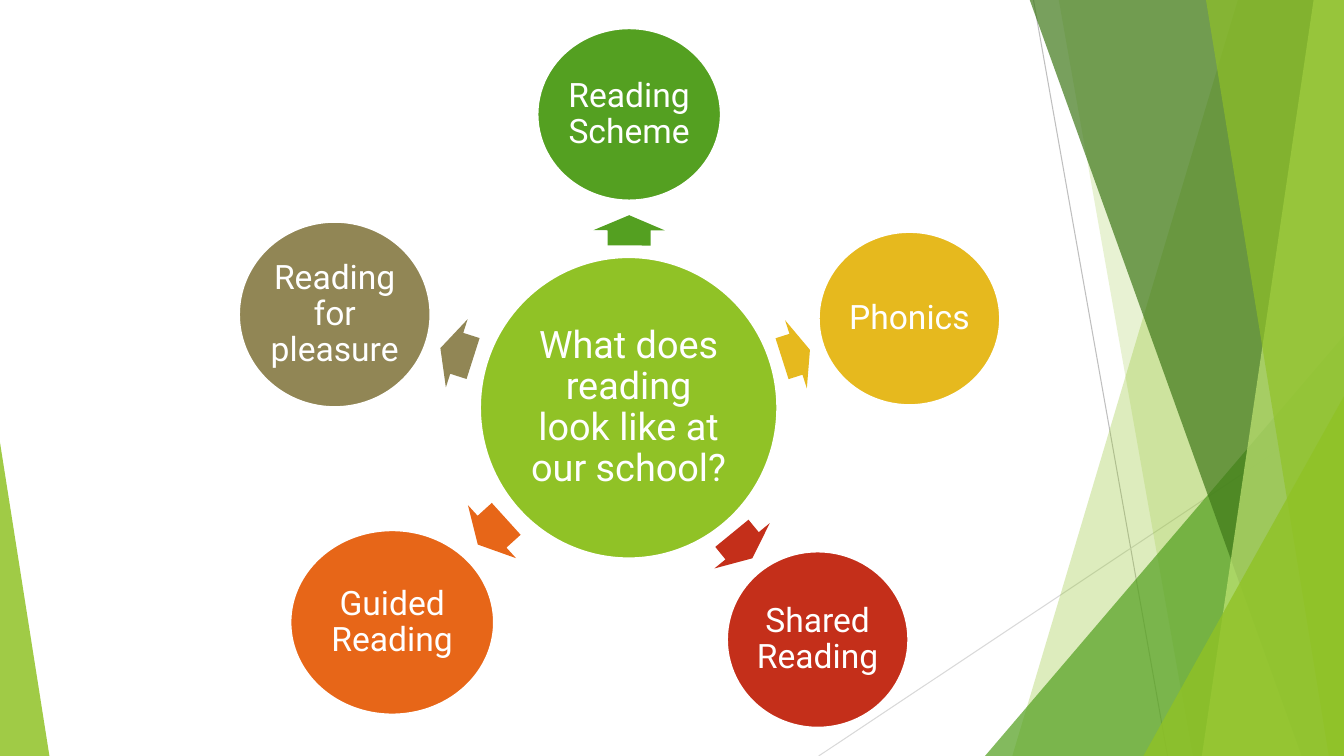
from lxml import etree
from pptx import Presentation
from pptx.dml.color import RGBColor
from pptx.enum.shapes import MSO_CONNECTOR, MSO_SHAPE
from pptx.enum.text import MSO_ANCHOR, PP_ALIGN
from pptx.oxml.ns import qn
from pptx.util import Inches, Pt

COLORS = {
    "white": "FFFFFF",
    "lime": "90C226",
    "green": "54A021",
    "forest": "3F7819",
    "pale": "C0E474",
    "gold": "E6B91E",
    "orange": "E76618",
    "red": "C42F1A",
    "olive": "918655",
    "gray": "BFBFBF",
    "light_gray": "D9D9D9",
}
WIDTH, HEIGHT, TOP = 13.33, 7.5, -0.01


def paint(shape, color, opacity=100):
    shape.shadow.inherit = False
    shape.fill.solid()
    shape.fill.fore_color.rgb = RGBColor.from_string(COLORS[color])
    shape.line.fill.background()
    if opacity < 100:
        tint = shape.fill._xPr.find(qn("a:solidFill"))[0]
        etree.SubElement(tint, qn("a:alpha")).set("val", str(opacity * 1000))


def add_circle(left, top, width, height, color, label, size, margin):
    circle = slide.shapes.add_shape(
        MSO_SHAPE.OVAL, Inches(left), Inches(top), Inches(width), Inches(height))
    paint(circle, color)
    circle.line.color.rgb = RGBColor.from_string(COLORS["white"])
    circle.line.width = Pt(1.5)
    frame = circle.text_frame
    frame.text = label
    frame.word_wrap = True
    frame.vertical_anchor = MSO_ANCHOR.MIDDLE
    frame.margin_left = frame.margin_right = Inches(margin)
    frame.margin_top = frame.margin_bottom = Inches(margin)
    para = frame.paragraphs[0]
    para.alignment = PP_ALIGN.CENTER
    para.line_spacing = 0.9
    span = para.runs[0]
    span.font.name = "Roboto"
    span.font.size = Pt(size)
    span.font.color.rgb = RGBColor.from_string(COLORS["white"])


deck = Presentation()
deck.slide_width = Inches(WIDTH)
deck.slide_height = Inches(HEIGHT)
slide = deck.slides.add_slide(deck.slide_layouts[6])

rays = [
    (10.25, 0, 11.58, HEIGHT, "gray"),
    (WIDTH, 4.03, 8.12, HEIGHT, "light_gray"),
]
for start_x, start_y, end_x, end_y, color in rays:
    ray = slide.shapes.add_connector(
        MSO_CONNECTOR.STRAIGHT,
        Inches(start_x), Inches(start_y), Inches(end_x), Inches(end_y))
    ray.line.color.rgb = RGBColor.from_string(COLORS[color])
    ray.line.width = Pt(0.75)
    etree.SubElement(ray._element.spPr, qn("a:effectLst"))

facets = [
    ("band", (12.28, 10.04), "lime", 30),
    ("band", (10.5, 11.83), "lime", 20),
    ("triangle", (9.77, 3.33, 3.56, 1), "green", 72),
    ("band", (10.21, 12.91), "forest", 70),
    ("band", (13.03, 11.92), "pale", 70),
    ("band", (11.96, 13.18), "lime", 65),
    ("triangle", (11.34, 3.93, 1.99, 1), "lime", 80),
    ("triangle", (0, 4.39, 0.49, 0), "lime", 85),
]
for kind, place, color, opacity in facets:
    if kind == "band":
        top_x, bottom_x = place
        corners = [(WIDTH, TOP), (WIDTH, HEIGHT), (bottom_x, HEIGHT)]
        builder = slide.shapes.build_freeform(Inches(top_x), Inches(TOP))
        builder.add_line_segments([(Inches(x), Inches(y)) for x, y in corners])
        facet = builder.convert_to_shape()
    else:
        left, top, width, apex = place
        facet = slide.shapes.add_shape(
            MSO_SHAPE.ISOSCELES_TRIANGLE,
            Inches(left), Inches(top), Inches(width), Inches(HEIGHT - top))
        facet.adjustments[0] = apex
    paint(facet, color, opacity)

add_circle(4.76, 2.55, 2.95, 2.99, "lime",
           "What does reading look like at our school?", 27, 0.04)

topics = [
    ("Reading Scheme", "green", (5.33, 0.28, 1.82, 1.71), (6.09, 1.93, 0.3), 270.2),
    ("Phonics", "gold", (8.12, 2.3, 1.8, 1.72), (7.75, 3.16, 0.29), 342.3),
    ("Guided Reading", "orange", (2.88, 5.26, 2.02, 1.83), (4.69, 4.92, 0.38), 137.8),
    ("Shared Reading", "red", (7.21, 5.47, 1.8, 1.75), (7.2, 5.06, 0.32), 50.7),
    ("Reading for pleasure", "olive", (2.37, 2.2, 1.9, 1.84), (4.36, 3.15, 0.34), 197.7),
]
for label, color, circle_place, (left, top, length), angle in topics:
    arrow = slide.shapes.add_shape(
        MSO_SHAPE.RIGHT_ARROW,
        Inches(left), Inches(top), Inches(length), Inches(0.71))
    arrow.adjustments[0] = 0.6
    arrow.adjustments[1] = 0.5
    arrow.rotation = angle
    paint(arrow, color)
    add_circle(*circle_place, color, label, 24, 0.03)

deck.save("out.pptx")
